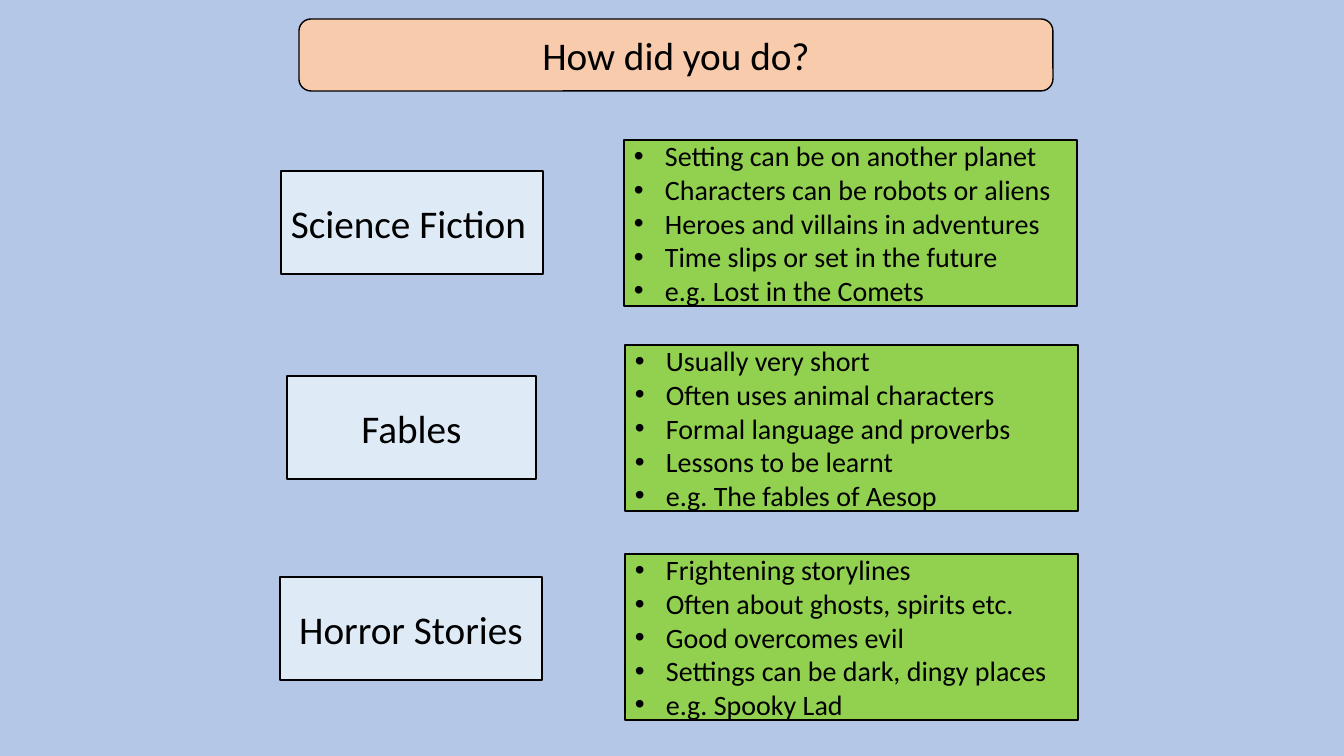
from dataclasses import dataclass

from lxml.etree import SubElement
from pptx import Presentation
from pptx.dml.color import RGBColor
from pptx.enum.shapes import MSO_SHAPE
from pptx.enum.text import MSO_ANCHOR, PP_ALIGN
from pptx.oxml.ns import qn
from pptx.slide import Slide
from pptx.text.text import TextFrame
from pptx.util import Emu, Pt

EMU_PER_PX = 914400 / 100.8


@dataclass(frozen=True)
class Theme:
    background: str = "B4C7E7"
    title_fill: str = "F8CBAD"
    genre_fill: str = "DEEBF7"
    features_fill: str = "92D050"
    ink: str = "000000"
    font: str = "Calibri"
    heading_size: int = 28
    features_size: int = 20
    line_width: int = 1
    bullet_indent: int = 31


@dataclass(frozen=True)
class Box:
    left: int
    top: int
    width: int
    height: int


@dataclass(frozen=True)
class Genre:
    name: str
    name_box: Box
    features_left: int
    features_top: int
    features: tuple[str, ...]
    align: PP_ALIGN = PP_ALIGN.CENTER


THEME = Theme()
TITLE_BOX = Box(299, 19, 754, 72)
FEATURES_WIDTH, FEATURES_HEIGHT = 453, 166
GENRES = (
    Genre("Science Fiction", Box(281, 171, 262, 103), 624, 140, (
        "Setting can be on another planet",
        "Characters can be robots or aliens",
        "Heroes and villains in adventures",
        "Time slips or set in the future",
        "e.g. Lost in the Comets",
    ), PP_ALIGN.LEFT),
    Genre("Fables", Box(287, 376, 249, 103), 625, 345, (
        "Usually very short",
        "Often uses animal characters",
        "Formal language and proverbs",
        "Lessons to be learnt",
        "e.g. The fables of Aesop",
    )),
    Genre("Horror Stories", Box(280, 577, 262, 103), 625, 554, (
        "Frightening storylines",
        "Often about ghosts, spirits etc.",
        "Good overcomes evil",
        "Settings can be dark, dingy places",
        "e.g. Spooky Lad",
    )),
)


def px(length: int) -> Emu:
    return Emu(round(length * EMU_PER_PX))


def write_text(frame: TextFrame, text: str, *, size: int,
               align: PP_ALIGN = PP_ALIGN.LEFT, bulleted: bool = False) -> None:
    frame.word_wrap = True
    frame.vertical_anchor = MSO_ANCHOR.MIDDLE
    frame.text = text
    for paragraph in frame.paragraphs:
        paragraph.alignment = align
        for run in paragraph.runs:
            run.font.name = THEME.font
            run.font.size = Pt(size)
            run.font.color.rgb = RGBColor.from_string(THEME.ink)
        if bulleted:
            properties = paragraph._p.get_or_add_pPr()
            indent = px(THEME.bullet_indent)
            properties.set("marL", str(indent))
            properties.set("indent", str(-indent))
            bullet_font = SubElement(properties, qn("a:buFont"))
            bullet_font.set("typeface", "Arial")
            bullet = SubElement(properties, qn("a:buChar"))
            bullet.set("char", "•")


def add_box(slide: Slide, box: Box, fill: str,
            preset: MSO_SHAPE = MSO_SHAPE.RECTANGLE) -> TextFrame:
    shape = slide.shapes.add_shape(
        preset, px(box.left), px(box.top), px(box.width), px(box.height))
    shape.shadow.inherit = False
    shape.fill.solid()
    shape.fill.fore_color.rgb = RGBColor.from_string(fill)
    shape.line.color.rgb = RGBColor.from_string(THEME.ink)
    shape.line.width = Pt(THEME.line_width)
    return shape.text_frame


def add_genre(slide: Slide, genre: Genre) -> None:
    name_frame = add_box(slide, genre.name_box, THEME.genre_fill)
    write_text(name_frame, genre.name, size=THEME.heading_size, align=genre.align)
    features_box = Box(genre.features_left, genre.features_top,
                       FEATURES_WIDTH, FEATURES_HEIGHT)
    features_frame = add_box(slide, features_box, THEME.features_fill)
    write_text(features_frame, "\n".join(genre.features),
               size=THEME.features_size, bulleted=True)


def main() -> None:
    presentation = Presentation()
    presentation.slide_width = px(1344)
    presentation.slide_height = px(756)
    slide = presentation.slides.add_slide(presentation.slide_layouts[6])
    slide.background.fill.solid()
    slide.background.fill.fore_color.rgb = RGBColor.from_string(THEME.background)

    title_frame = add_box(slide, TITLE_BOX, THEME.title_fill,
                          MSO_SHAPE.ROUNDED_RECTANGLE)
    write_text(title_frame, "How did you do?", size=THEME.heading_size,
               align=PP_ALIGN.CENTER)
    for genre in GENRES:
        add_genre(slide, genre)
    presentation.save("out.pptx")


if __name__ == "__main__":
    main()
